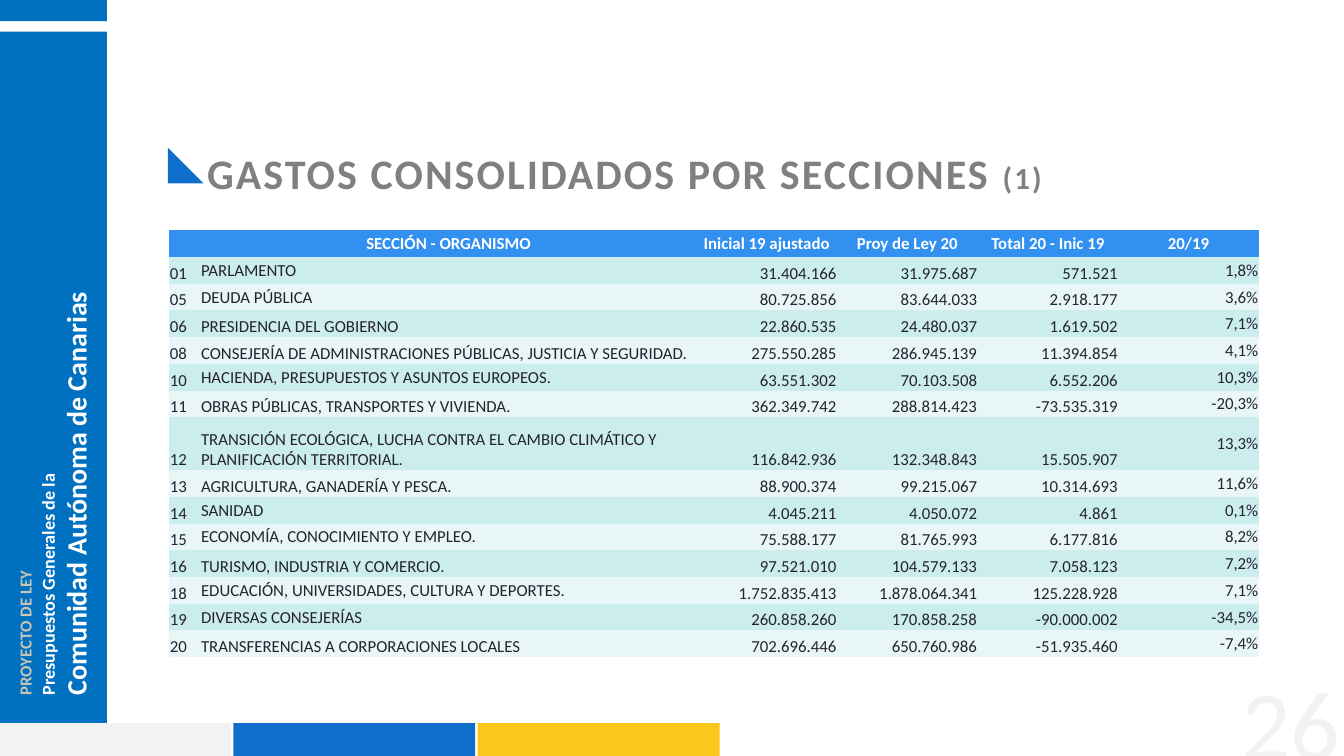
from dataclasses import dataclass

from pptx import Presentation
from pptx.dml.color import RGBColor
from pptx.enum.shapes import MSO_SHAPE
from pptx.enum.text import MSO_ANCHOR, MSO_AUTO_SIZE, PP_ALIGN
from pptx.util import Inches, Pt

RECT, TRIANGLE = MSO_SHAPE.RECTANGLE, MSO_SHAPE.RIGHT_TRIANGLE
TOP, MIDDLE, BOTTOM = MSO_ANCHOR.TOP, MSO_ANCHOR.MIDDLE, MSO_ANCHOR.BOTTOM
LEFT, CENTER, RIGHT = PP_ALIGN.LEFT, PP_ALIGN.CENTER, PP_ALIGN.RIGHT
NO_AUTOFIT = MSO_AUTO_SIZE.NONE
PLAIN_TABLE = "{2D5ABB26-0587-4C30-8999-92F81FD0307C}"


@dataclass(frozen=True)
class Theme:
    font: str = "Calibri"
    sidebar: str = "0070C0"
    blue: str = "0F6DCB"
    yellow: str = "FBC71A"
    pale: str = "F2F2F2"
    white: str = "FFFFFF"
    sand: str = "C8C5B4"
    heading: str = "808080"
    ink: str = "25232F"
    header: str = "3291F0"
    bands: tuple = ("CCEDEE", "E8F6F7")
    body_size: int = 24
    subtitle_size: int = 26
    region_size: int = 40
    title_size: int = 60
    part_size: int = 44
    page_size: int = 139


T = Theme()

prs = Presentation()
prs.slide_width, prs.slide_height = Inches(26.67), Inches(15)
s = prs.slides.add_slide(prs.slide_layouts[5])


def add_block(kind, x, y, w, h, color):
    sp = s.shapes.add_shape(kind, Inches(x), Inches(y), Inches(w), Inches(h))
    sp.shadow.inherit = False
    sp.fill.solid()
    sp.fill.fore_color.rgb = RGBColor.from_string(color)
    sp.line.fill.background()


def add_run(p, text, size, color, bold=False):
    r = p.add_run()
    r.text = text
    r.font.name = T.font
    r.font.size = Pt(size)
    r.font.bold = bold
    r.font.color.rgb = RGBColor.from_string(color)
    return r


# Sidebar and bottom strip
add_block(RECT, -0.09, 0.63, 2.21, 14.51, T.sidebar)
for i, color in enumerate((T.pale, T.blue, T.yellow)):
    add_block(RECT, -0.22 + 4.85 * i, 14.35, 4.8, 0.99, color)
add_block(RECT, -0.09, -0.06, 2.21, 0.48, T.sidebar)

# Vertical sidebar text
sidebar_texts = [
    ((-5.96, 7.14, 12.91, 0.4), [("PROYECTO DE LEY", T.body_size, T.sand)]),
    ((-2.85, 9.19, 8.19, 1.03), [
        ("Presupuestos Generales de la", T.subtitle_size, T.white),
        ("Comunidad Autónoma de Canarias", T.region_size, T.white),
    ]),
]
for box, lines in sidebar_texts:
    sp = s.shapes.add_textbox(*map(Inches, box))
    sp.rotation = 270
    tf = sp.text_frame
    tf.word_wrap = True
    tf.margin_left = tf.margin_right = tf.margin_top = tf.margin_bottom = 0
    for i, (text, size, color) in enumerate(lines):
        p = tf.add_paragraph() if i else tf.paragraphs[0]
        add_run(p, text, size, color, bold=True)

# Page number
sp = s.shapes.add_textbox(Inches(20.47), Inches(13.09), Inches(6.22), Inches(1.92))
sp.text_frame.word_wrap = True
p = sp.text_frame.paragraphs[0]
p.alignment = RIGHT
add_run(p, "26", T.page_size, T.pale)

# Title with its corner marker
title = s.shapes.title
title.left, title.top = Inches(4.01), Inches(2.88)
title.width, title.height = Inches(21.93), Inches(0.81)
tf = title.text_frame
tf.auto_size = NO_AUTOFIT
tf.word_wrap = True
tf.vertical_anchor = TOP
p = tf.paragraphs[0]
p.alignment = LEFT
for text, size in (("GASTOS CONSOLIDADOS POR SECCIONES ", T.title_size), ("(1)", T.part_size)):
    r = add_run(p, text, size, T.heading, bold=True)
    r.font._element.set("spc", "300")
add_block(TRIANGLE, 3.33, 2.93, 0.71, 0.71, T.blue)

# Spending table
header = ("", "SECCIÓN - ORGANISMO", "Inicial 19 ajustado", "Proy de Ley 20",
          "Total 20 - Inic 19", "20/19")
sections = [
    ("01", "PARLAMENTO", "31.404.166", "31.975.687", "571.521", "1,8%"),
    ("05", "DEUDA PÚBLICA", "80.725.856", "83.644.033", "2.918.177", "3,6%"),
    ("06", "PRESIDENCIA DEL GOBIERNO", "22.860.535", "24.480.037", "1.619.502", "7,1%"),
    ("08", "CONSEJERÍA DE ADMINISTRACIONES PÚBLICAS, JUSTICIA Y SEGURIDAD.",
     "275.550.285", "286.945.139", "11.394.854", "4,1%"),
    ("10", "HACIENDA, PRESUPUESTOS Y ASUNTOS EUROPEOS.",
     "63.551.302", "70.103.508", "6.552.206", "10,3%"),
    ("11", "OBRAS PÚBLICAS, TRANSPORTES Y VIVIENDA.",
     "362.349.742", "288.814.423", "-73.535.319", "-20,3%"),
    ("12", "TRANSICIÓN ECOLÓGICA, LUCHA CONTRA EL CAMBIO CLIMÁTICO Y PLANIFICACIÓN TERRITORIAL.",
     "116.842.936", "132.348.843", "15.505.907", "13,3%"),
    ("13", "AGRICULTURA, GANADERÍA Y PESCA.", "88.900.374", "99.215.067", "10.314.693", "11,6%"),
    ("14", "SANIDAD", "4.045.211", "4.050.072", "4.861", "0,1%"),
    ("15", "ECONOMÍA, CONOCIMIENTO Y EMPLEO.", "75.588.177", "81.765.993", "6.177.816", "8,2%"),
    ("16", "TURISMO, INDUSTRIA Y COMERCIO.", "97.521.010", "104.579.133", "7.058.123", "7,2%"),
    ("18", "EDUCACIÓN, UNIVERSIDADES, CULTURA Y DEPORTES.",
     "1.752.835.413", "1.878.064.341", "125.228.928", "7,1%"),
    ("19", "DIVERSAS CONSEJERÍAS", "260.858.260", "170.858.258", "-90.000.002", "-34,5%"),
    ("20", "TRANSFERENCIAS A CORPORACIONES LOCALES",
     "702.696.446", "650.760.986", "-51.935.460", "-7,4%"),
]
centered_names = {"01", "05", "10", "14", "15", "18", "19"}
tall_section = "12"
rows = [header] + sections

frame = s.shapes.add_table(len(rows), len(header), Inches(3.36), Inches(4.57),
                           Inches(21.62), Inches(8.52))
table = frame.table
table._tbl.tblPr[0].text = PLAIN_TABLE
for column, width in zip(table.columns, [0.62, 9.84] + [2.79] * 4):
    column.width = Inches(width)

for i, values in enumerate(rows):
    code = values[0]
    is_header = i == 0
    table.rows[i].height = Inches(1.05 if code == tall_section else 0.53)
    fill = T.header if is_header else T.bands[(i - 1) % 2]
    for j, text in enumerate(values):
        cell = table.cell(i, j)
        cell.fill.solid()
        cell.fill.fore_color.rgb = RGBColor.from_string(fill)
        cell.margin_left = cell.margin_right = cell.margin_top = Inches(0.01)
        cell.margin_bottom = 0
        centered = is_header or j == 5 or (j == 1 and code in centered_names)
        cell.vertical_anchor = MIDDLE if centered else BOTTOM
        if text:
            p = cell.text_frame.paragraphs[0]
            p.alignment = CENTER if is_header else LEFT if j < 2 else RIGHT
            add_run(p, text, T.body_size, T.white if is_header else T.ink, bold=is_header)

prs.save("out.pptx")
